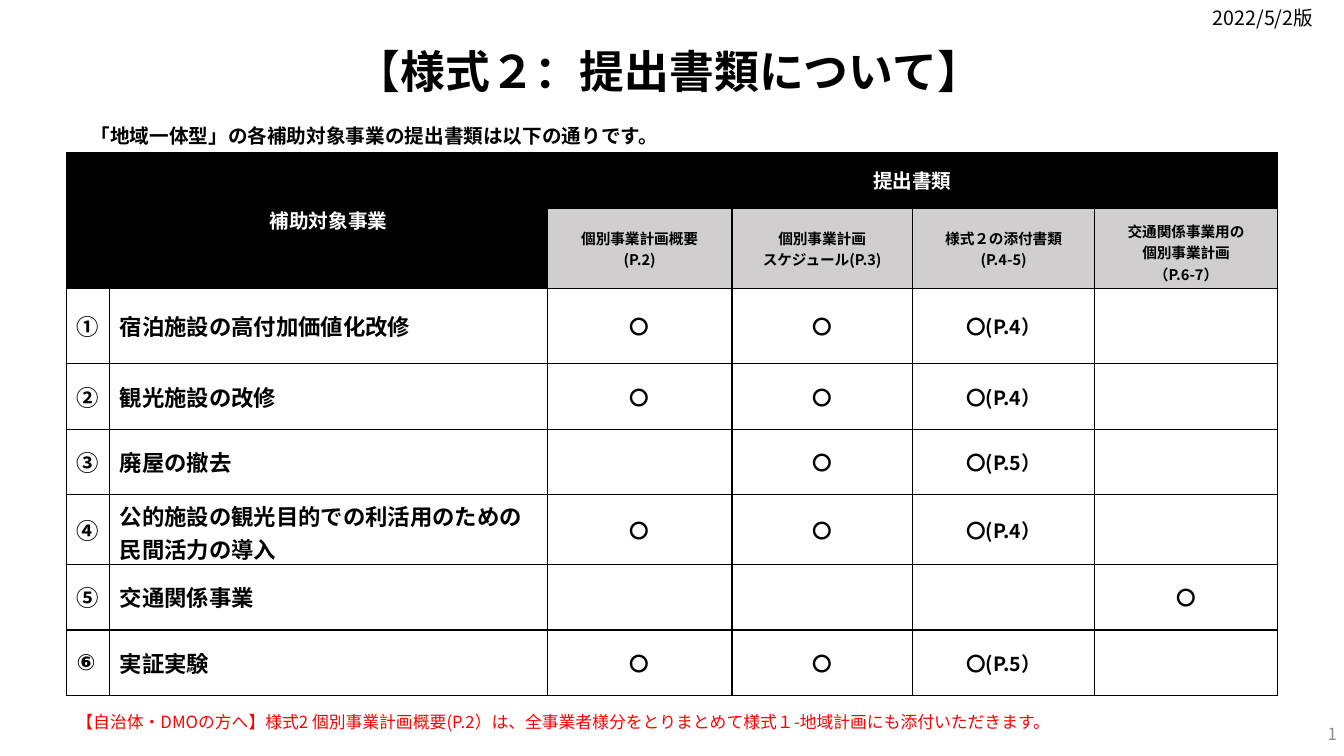
from lxml import etree
from pptx import Presentation
from pptx.dml.color import RGBColor
from pptx.enum.text import MSO_ANCHOR, MSO_AUTO_SIZE, PP_ALIGN
from pptx.oxml.ns import qn
from pptx.util import Inches, Pt

LEFT, CENTER, RIGHT = PP_ALIGN.LEFT, PP_ALIGN.CENTER, PP_ALIGN.RIGHT
TOP, MIDDLE = MSO_ANCHOR.TOP, MSO_ANCHOR.MIDDLE
GROW, FIXED = MSO_AUTO_SIZE.SHAPE_TO_FIT_TEXT, MSO_AUTO_SIZE.NONE

COLORS = {"black": "000000", "white": "FFFFFF", "header": "D0CECE",
          "note": "FF0000", "number": "8C8C8C"}
COLUMN_WIDTHS = [0.43, 4.34, 1.83, 1.79, 1.81, 1.81]
ROW_HEIGHTS = [0.56, 0.79, 0.75, 0.65, 0.65, 0.69, 0.65, 0.65]
DOCUMENTS = ["個別事業計画概要\n(P.2)", "個別事業計画\nスケジュール(P.3)",
             "様式２の添付書類\n(P.4-5)", "交通関係事業用の\n個別事業計画\n（P.6-7）"]
PROJECTS = [
    ("①", "宿泊施設の高付加価値化改修", "〇", "〇", "〇(P.4）", ""),
    ("②", "観光施設の改修", "〇", "〇", "〇(P.4）", ""),
    ("③", "廃屋の撤去", "", "〇", "〇(P.5）", ""),
    ("④", "公的施設の観光目的での利活用のための\n民間活力の導入", "〇", "〇", "〇(P.4）", ""),
    ("⑤", "交通関係事業", "", "", "", "〇"),
    ("⑥", "実証実験", "〇", "〇", "〇(P.5）", ""),
]


class SlideBuilder:
    """Holds the text style and the current slide, and adds elements to it."""

    font = "Noto Sans CJK JP"

    def __init__(self, deck):
        self.slide = deck.slides.add_slide(deck.slide_layouts[5])

    def fill_text(self, frame, text, size, color="black", bold=False,
                  align=LEFT, font=None, spacing=1.0):
        font = font or self.font
        frame.text = text
        for para in frame.paragraphs:
            para.alignment = align
            para.line_spacing = spacing
            for span in para.runs:
                formats = {"size": Pt(size), "bold": bold, "name": font}
                for name, value in formats.items():
                    setattr(span.font, name, value)
                span.font.color.rgb = RGBColor.from_string(COLORS[color])
                latin = span.font._element.find(qn("a:latin"))
                east_asian = etree.Element(qn("a:ea"), typeface=font)
                latin.addnext(east_asian)

    def place(self, box, area, text, size, anchor=TOP, auto_size=GROW, **style):
        for name, value in zip(("left", "top", "width", "height"), area):
            setattr(box, name, Inches(value))
        formats = {"word_wrap": True, "vertical_anchor": anchor, "auto_size": auto_size}
        for name, value in formats.items():
            setattr(box.text_frame, name, value)
        self.fill_text(box.text_frame, text, size, **style)

    def title(self, area, text, size, **style):
        self.place(self.slide.shapes.title, area, text, size, **style)

    def text(self, area, text, size, **style):
        box = self.slide.shapes.add_textbox(0, 0, 0, 0)
        self.place(box, area, text, size, **style)

    def table(self, left, top, widths, heights):
        frame = self.slide.shapes.add_table(
            len(heights), len(widths), Inches(left), Inches(top),
            Inches(sum(widths)), Inches(sum(heights)))
        table = frame.table
        for column, width in zip(table.columns, widths):
            column.width = Inches(width)
        for row, height in zip(table.rows, heights):
            row.height = Inches(height)
        return table

    def cell(self, cell, text, size, fill="white", margin=0.05, **style):
        formats = {"vertical_anchor": MIDDLE, "margin_top": Inches(margin),
                   "margin_bottom": Inches(margin)}
        for name, value in formats.items():
            setattr(cell, name, value)
        cell.fill.solid()
        cell.fill.fore_color.rgb = RGBColor.from_string(COLORS[fill])
        self.fill_text(cell.text_frame, text, size, bold=True, **style)
        properties = cell._tc.get_or_add_tcPr()
        for index, side in enumerate(("lnL", "lnR", "lnT", "lnB")):
            line = etree.Element(qn(f"a:{side}"), w=str(Pt(1)))
            solid = etree.SubElement(line, qn("a:solidFill"))
            etree.SubElement(solid, qn("a:srgbClr"), val=COLORS["black"])
            properties.insert(index, line)


def add_document_table(page):
    table = page.table(0.66, 1.51, COLUMN_WIDTHS, ROW_HEIGHTS)
    headings = [["", "補助対象事業", "提出書類", "", "", ""], ["", "", *DOCUMENTS]]
    for row, texts in enumerate(headings):
        for column, text in enumerate(texts):
            if row == 1 and column > 1:
                style = {"size": 10.5, "fill": "header", "margin": 0.12}
            else:
                style = {"size": 14, "fill": "black", "color": "white"}
            page.cell(table.cell(row, column), text, align=CENTER, **style)
    for row, project in enumerate(PROJECTS, start=len(headings)):
        for column, text in enumerate(project):
            if column > 1:
                style = {"size": 14, "align": CENTER, "margin": 0.12}
            else:
                style = {"size": 16, "font": "Arial" if text == "⑥" else None}
            page.cell(table.cell(row, column), text, **style)
    for start, end in (((0, 0), (1, 0)), ((0, 1), (1, 1)), ((0, 2), (0, 5))):
        table.cell(*start).merge(table.cell(*end))


def main():
    deck = Presentation()
    deck.slide_width, deck.slide_height = Inches(13.33), Inches(7.5)
    page = SlideBuilder(deck)
    page.text((10.36, 7.08, 3, 0.4), "1", 12, color="number", align=RIGHT,
              anchor=MIDDLE, auto_size=FIXED)
    add_document_table(page)
    page.text((0.8, 1.18, 6.67, 0.34),
              "「地域一体型」の各補助対象事業の提出書類は以下の通りです。", 14, bold=True)
    page.title((0.17, 0.44, 12.93, 0.64), "【様式２：提出書類について】", 32,
               bold=True, align=CENTER, spacing=0.9)
    page.text((0.66, 7.01, 12.01, 0.3),
              "【自治体・DMOの方へ】様式2 個別事業計画概要(P.2）は、"
              "全事業者様分をとりまとめて様式１-地域計画にも添付いただきます。",
              12, color="note")
    page.text((11.93, 0.01, 1.4, 0.34), "2022/5/2版", 14)
    deck.save("out.pptx")


if __name__ == "__main__":
    main()
